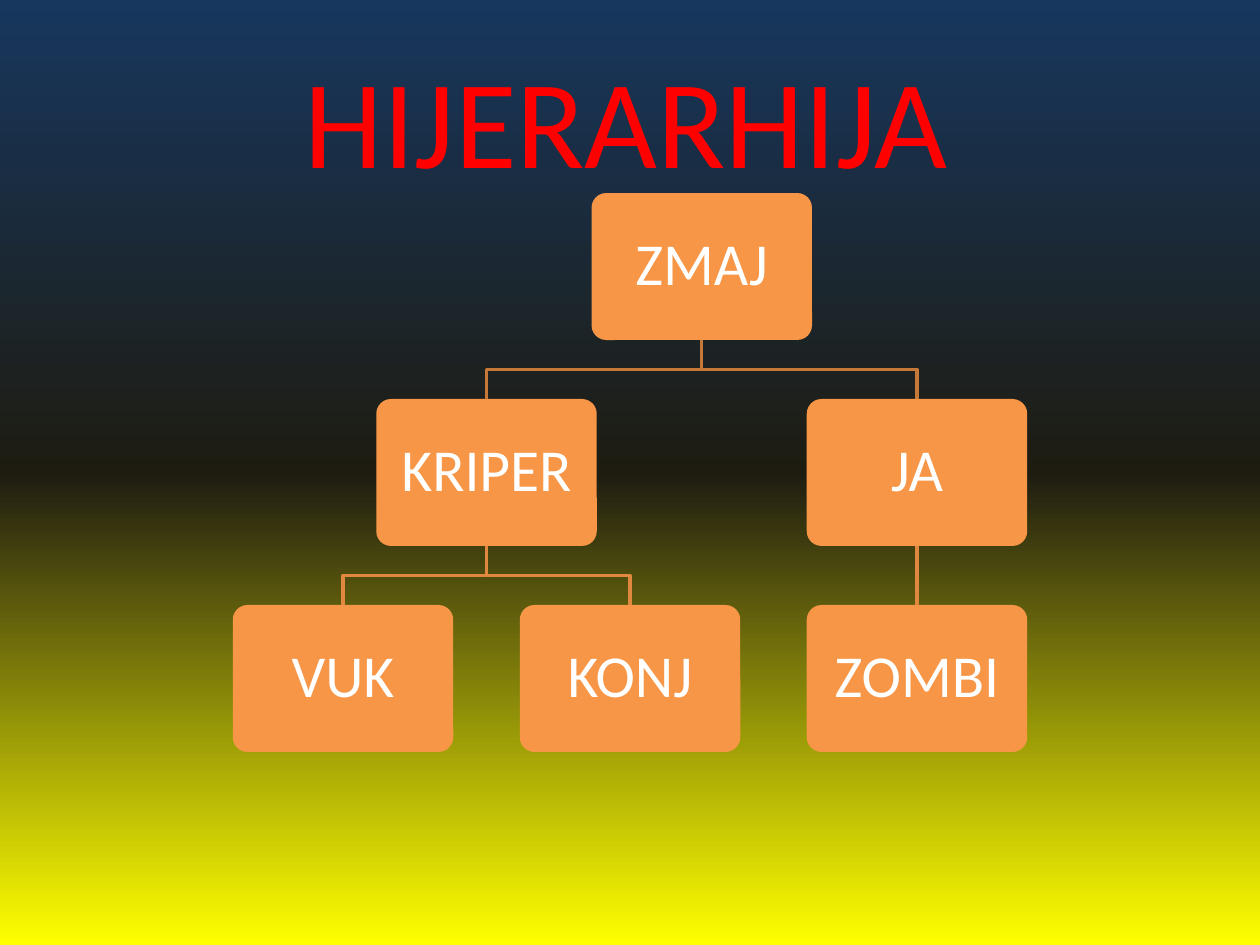
import copy

import pptx
import pptx.dml.color
import pptx.enum.shapes
import pptx.enum.text
import pptx.oxml
import pptx.oxml.ns
import pptx.util
from pptx.util import Pt

RGBColor = pptx.dml.color.RGBColor
NAVY = RGBColor(0x17, 0x37, 0x5E)
DARK = RGBColor(0x1E, 0x1C, 0x11)
YELLOW = RGBColor(0xFF, 0xFF, 0x00)
RED = RGBColor(0xFF, 0x00, 0x00)
WHITE = RGBColor(0xFF, 0xFF, 0xFF)
ORANGE = RGBColor(0xF7, 0x96, 0x46)
UPPER_LINE = RGBColor(0xC6, 0x78, 0x38)
LOWER_LINE = RGBColor(0xE0, 0x88, 0x40)

BOX_W, BOX_H = 126, 84
FIRST_X, COLUMN_STEP = 196, 164
FIRST_Y, ROW_STEP = 110.3, 117.7

NODES = {
    "ZMAJ": (1.25, 0),
    "KRIPER": (0.5, 1),
    "JA": (2, 1),
    "VUK": (0, 2),
    "KONJ": (1, 2),
    "ZOMBI": (2, 2),
}
LINKS = [
    ("ZMAJ", "KRIPER", UPPER_LINE),
    ("ZMAJ", "JA", UPPER_LINE),
    ("KRIPER", "VUK", LOWER_LINE),
    ("KRIPER", "KONJ", LOWER_LINE),
    ("JA", "ZOMBI", LOWER_LINE),
]


class Deck:
    font = "Calibri"

    def __init__(self):
        self.prs = pptx.Presentation()
        self.prs.slide_width, self.prs.slide_height = Pt(720), Pt(540)
        self.s = self.prs.slides.add_slide(self.prs.slide_layouts[5])

    def background(self, stops):
        fill = self.s.background.fill
        fill.gradient()
        fill.gradient_angle = 270
        gs_list = self.s.element.find(".//" + pptx.oxml.ns.qn("a:gsLst"))
        gs_list.append(copy.deepcopy(gs_list[0]))
        for stop, (position, color) in zip(fill.gradient_stops, stops):
            stop.position = position
            stop.color.rgb = color

    def style_text(self, tf, text, size, color, align):
        tf.text = text
        p = tf.paragraphs[0]
        p.alignment = align
        r = p.runs[0]
        r.font.name, r.font.size = self.font, Pt(size)
        r.font.color.rgb = color
        return p

    def title(self, text, x, y, w, h):
        sp = self.s.shapes.title
        sp.left, sp.top, sp.width, sp.height = Pt(x), Pt(y), Pt(w), Pt(h)
        tf = sp.text_frame
        tf.vertical_anchor = pptx.enum.text.MSO_ANCHOR.TOP
        tf.auto_size = pptx.enum.text.MSO_AUTO_SIZE.SHAPE_TO_FIT_TEXT
        self.style_text(tf, text, 72, RED, pptx.enum.text.PP_ALIGN.LEFT)

    def box(self, text, column, row):
        x = FIRST_X + column * COLUMN_STEP - BOX_W / 2
        y = FIRST_Y + row * ROW_STEP
        sp = self.s.shapes.add_shape(
            pptx.enum.shapes.MSO_SHAPE.ROUNDED_RECTANGLE,
            Pt(x), Pt(y), Pt(BOX_W), Pt(BOX_H))
        sp.adjustments[0] = 0.1
        sp.shadow.inherit = False
        sp.fill.solid()
        sp.fill.fore_color.rgb = ORANGE
        sp.line.fill.background()
        tf = sp.text_frame
        tf.word_wrap = True
        tf.vertical_anchor = pptx.enum.text.MSO_ANCHOR.MIDDLE
        tf.margin_left = tf.margin_right = Pt(10)
        tf.margin_top = tf.margin_bottom = Pt(10)
        p = self.style_text(tf, text, 34, WHITE, pptx.enum.text.PP_ALIGN.CENTER)
        p.line_spacing = 0.9
        return sp

    def link(self, parent, child, color):
        x1, y1 = parent.left + parent.width // 2, parent.top + parent.height
        x2, y2 = child.left + child.width // 2, child.top
        if x1 == x2:
            sp = self.s.shapes.add_connector(
                pptx.enum.shapes.MSO_CONNECTOR.STRAIGHT, x1, y1, x2, y2)
            sp.begin_connect(parent, 2)
            sp.end_connect(child, 0)
        else:
            middle = (y1 + y2) // 2
            builder = self.s.shapes.build_freeform(x1, y1)
            builder.add_line_segments(
                [(x1, middle), (x2, middle), (x2, y2)], close=False)
            sp = builder.convert_to_shape()
            sp.fill.background()
        sp.line.color.rgb = color
        sp.line.width = Pt(2)
        sp.element.spPr.append(
            pptx.oxml.parse_xml("<a:effectLst %s/>" % pptx.oxml.ns.nsdecls("a")))


def main():
    deck = Deck()
    deck.background([(0, NAVY), (0.5, DARK), (1, YELLOW)])
    deck.title("HIJERARHIJA", 167, 20.5, 442, 94.5)
    boxes = {name: deck.box(name, *place) for name, place in NODES.items()}
    for parent, child, color in LINKS:
        deck.link(boxes[parent], boxes[child], color)
    deck.prs.save("out.pptx")


if __name__ == "__main__":
    main()
